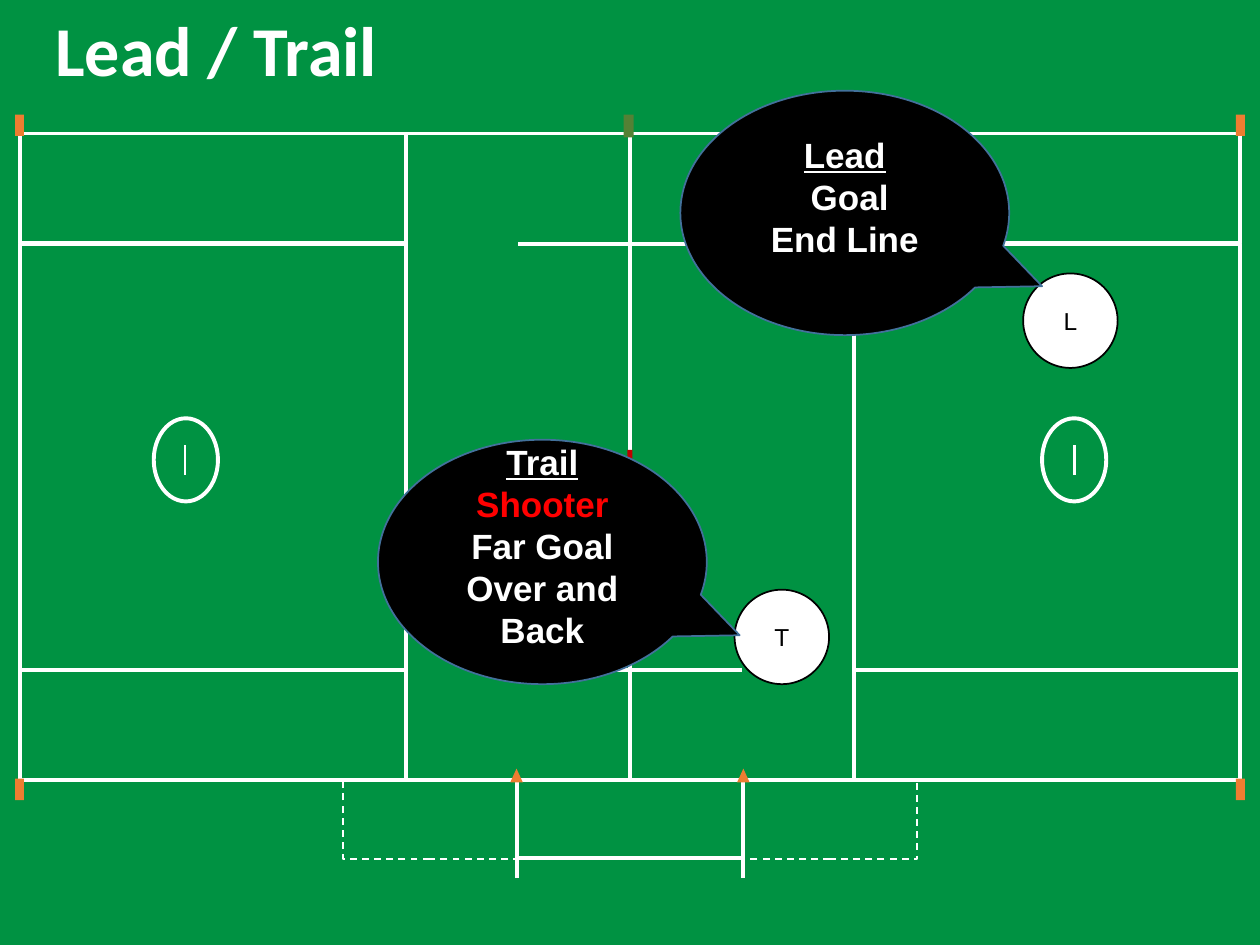
from dataclasses import dataclass

from lxml import etree
from pptx import Presentation
from pptx.dml.color import RGBColor
from pptx.enum import dml, shapes, text
from pptx.oxml.ns import qn
from pptx.util import Inches, Pt

SLIDE_W = 10
WHITE, BLACK, ORANGE = "FFFFFF", "000000", "ED7D31"
SHAPE = shapes.MSO_SHAPE


@dataclass
class Box:
    """A marking on the left half, mirrored onto the right half."""
    left: float
    top: float
    width: float
    height: float
    kind: int = SHAPE.RECTANGLE
    fill: str | None = None
    line: str | None = WHITE
    weight: float = 2.25
    dashed: bool = False


@dataclass
class Stripe:
    x1: float
    y1: float
    x2: float
    y2: float
    weight: float = 2.25


@dataclass
class Official:
    """An official's position and the duties in the callout beside it."""
    letter: str
    left: float
    top: float
    bubble_left: float
    bubble_top: float
    duties: list[tuple[str, str]]


HALF_BOXES = [
    Box(3.22, 1.06, 1.78, 5.13),
    Box(0.16, 1.06, 3.06, 0.87),
    Box(0.16, 5.32, 3.06, 0.87),
    Box(0.16, 1.94, 3.06, 3.38),
    Box(0.12, 0.91, 0.07, 0.17, fill=ORANGE, line=None),
    Box(0.12, 6.18, 0.07, 0.17, fill=ORANGE, line=None),
    Box(2.72, 6.2, 1.38, 0.62, weight=1, dashed=True),
    Box(1.22, 3.32, 0.51, 0.66, kind=SHAPE.OVAL),
]
HALF_STRIPES = [
    Stripe(1.47, 3.77, 1.47, 3.53, weight=1.5),
    Stripe(4.1, 6.97, 4.1, 6.21),
    *[Stripe(5, y, 4.11, y) for y in (1.94, 5.32, 6.81)],
]
MIDFIELD_MARKS = [
    Box(4.95, 0.91, 0.08, 0.18, fill="548135", line=None),
    Box(4.98, 3.57, 0.04, 0.15, fill="C00000", line=None),
]
OFFICIALS = [
    Official("L", 8.12, 2.17, 5.4, 0.72,
             [("Lead", WHITE), (" Goal", WHITE), ("End Line", WHITE)]),
    Official("T", 5.83, 4.68, 3, 3.49,
             [("Trail", WHITE), ("Shooter", "FF0000"),
              ("Far Goal", WHITE), ("Over and Back", WHITE)]),
]


def rgb(color: str) -> RGBColor:
    return RGBColor.from_string(color)


def paint(shape, fill: str | None, line: str | None, weight: float = 1) -> None:
    shape.shadow.inherit = False
    if fill:
        shape.fill.solid()
        shape.fill.fore_color.rgb = rgb(fill)
    else:
        shape.fill.background()
    if line:
        shape.line.color.rgb = rgb(line)
        shape.line.width = Pt(weight)
    else:
        shape.line.fill.background()


def style(paragraph, size: float, color: str, bold: bool = False, name: str = "Arial") -> None:
    font = paragraph.font
    font.name, font.size, font.bold = name, Pt(size), bold
    font.color.rgb = rgb(color)


def draw_box(slide, box: Box, mirrored: bool = False) -> None:
    left = SLIDE_W - box.left - box.width if mirrored else box.left
    marking = slide.shapes.add_shape(
        box.kind, Inches(left), Inches(box.top), Inches(box.width), Inches(box.height))
    paint(marking, box.fill, box.line, box.weight)
    if box.dashed:
        marking.line.dash_style = dml.MSO_LINE.DASH


def draw_stripe(slide, stripe: Stripe, mirrored: bool) -> None:
    x1, x2 = [SLIDE_W - x if mirrored else x for x in (stripe.x1, stripe.x2)]
    line = slide.shapes.add_connector(
        shapes.MSO_CONNECTOR.STRAIGHT,
        Inches(x1), Inches(stripe.y1), Inches(x2), Inches(stripe.y2))
    line.line.color.rgb = rgb(WHITE)
    line.line.width = Pt(stripe.weight)
    etree.SubElement(line._element.spPr, qn("a:effectLst"))


def draw_cone(slide, mirrored: bool) -> None:
    center = SLIDE_W - 4.1 if mirrored else 4.1
    points = [(Inches(center + dx), Inches(y))
              for dx, y in ((0, 6.1), (0.05, 6.21), (-0.05, 6.21))]
    outline = slide.shapes.build_freeform(*points[0])
    outline.add_line_segments(points[1:], close=True)
    paint(outline.convert_to_shape(), ORANGE, None)


def draw_position(slide, official: Official) -> None:
    circle = slide.shapes.add_shape(
        SHAPE.OVAL, Inches(official.left), Inches(official.top), Inches(0.75), Inches(0.75))
    paint(circle, WHITE, BLACK)
    label = circle.text_frame.paragraphs[0]
    label.text = official.letter
    label.alignment = text.PP_ALIGN.CENTER
    style(label, 14, BLACK)


def draw_callout(slide, official: Official) -> None:
    bubble = slide.shapes.add_shape(
        SHAPE.OVAL_CALLOUT, Inches(official.bubble_left), Inches(official.bubble_top),
        Inches(2.61), Inches(1.94))
    bubble.adjustments[0], bubble.adjustments[1] = 0.6, 0.3
    paint(bubble, BLACK, "42719B")
    frame = bubble.text_frame
    frame.word_wrap = True
    frame.vertical_anchor = text.MSO_ANCHOR.MIDDLE
    frame.margin_bottom = Inches(0.31)
    for i, (duty, color) in enumerate(official.duties):
        paragraph = frame.add_paragraph() if i else frame.paragraphs[0]
        paragraph.text = duty
        paragraph.alignment = text.PP_ALIGN.CENTER
        style(paragraph, 20, color, bold=True)
        paragraph.font.underline = i == 0


def main() -> None:
    prs = Presentation()
    prs.slide_width, prs.slide_height = Inches(SLIDE_W), Inches(7.5)
    slide = prs.slides.add_slide(prs.slide_layouts[5])
    slide.background.fill.solid()
    slide.background.fill.fore_color.rgb = rgb("009242")

    # Field markings, one half and its mirror
    for mirrored in (False, True):
        for box in HALF_BOXES:
            draw_box(slide, box, mirrored)
        for stripe in HALF_STRIPES:
            draw_stripe(slide, stripe, mirrored)
        draw_cone(slide, mirrored)
    for mark in MIDFIELD_MARKS:
        draw_box(slide, mark)

    # Title
    title = slide.shapes.title
    title.left, title.top = Inches(0.34), Inches(0.23)
    title.width, title.height = Inches(6.72), Inches(0.39)
    title.text_frame.auto_size = text.MSO_AUTO_SIZE.NONE
    title.text_frame.vertical_anchor = text.MSO_ANCHOR.MIDDLE
    heading = title.text_frame.paragraphs[0]
    heading.text = "Lead / Trail"
    heading.alignment = text.PP_ALIGN.LEFT
    heading.line_spacing = 0.9
    style(heading, 40, WHITE, bold=True, name="Calibri")

    # Officials, with callouts in front
    for official in OFFICIALS:
        draw_position(slide, official)
    for official in OFFICIALS:
        draw_callout(slide, official)

    prs.save("out.pptx")


if __name__ == "__main__":
    main()
